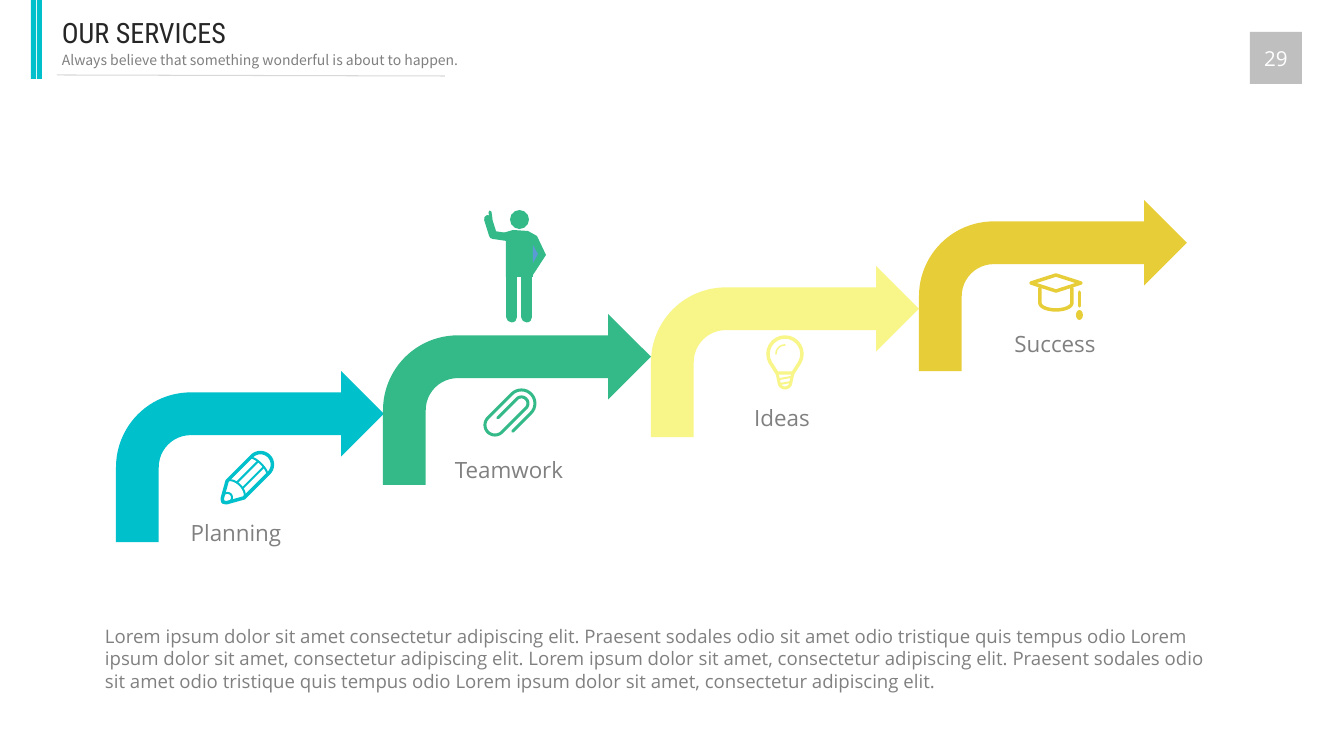
from math import cos, radians, sin, sqrt

from lxml.etree import SubElement
from pptx import Presentation
from pptx.dml.color import RGBColor
from pptx.enum.shapes import MSO_CONNECTOR, MSO_SHAPE
from pptx.enum.text import MSO_ANCHOR, PP_ALIGN
from pptx.oxml.ns import qn
from pptx.util import Emu, Pt

CYAN = RGBColor(0x00, 0xC0, 0xCB)
GREEN = RGBColor(0x34, 0xBA, 0x89)
LEMON = RGBColor(0xF8, 0xF6, 0x89)
GOLD = RGBColor(0xE7, 0xCE, 0x39)
BLUE = RGBColor(0x5B, 0x9B, 0xD5)
WHITE = RGBColor(0xFF, 0xFF, 0xFF)
INK = RGBColor(0x26, 0x26, 0x26)
GRAY = RGBColor(0x80, 0x80, 0x80)
SUBTITLE_GRAY = RGBColor(0x7F, 0x7F, 0x7F)
BADGE_GRAY = RGBColor(0xBF, 0xBF, 0xBF)
RULE_GRAY = RGBColor(0xD8, 0xD8, 0xD8)

TITLE = "OUR SERVICES"
SUBTITLE = "Always believe that something wonderful is about to happen."
PAGE_NUMBER = "29"
SENTENCE = "Lorem ipsum dolor sit amet, consectetur adipiscing elit."
PRAESENT = "Praesent sodales odio sit amet odio tristique quis tempus odio"
BODY = f"{SENTENCE.replace(',', '')} {PRAESENT} {SENTENCE} {SENTENCE} {PRAESENT} {SENTENCE}"

# label, colour, arrow corner, label corner
STEPS = [
    ("Planning", CYAN, (116, 371), (168, 514)),
    ("Teamwork", GREEN, (383, 314), (441, 451)),
    ("Ideas", LEMON, (651, 266), (714, 399)),
    ("Success", GOLD, (919, 200), (987, 325)),
]
ARROW_SIZE = (268, 171)
LABEL_SIZE = (136, 37)
EMU_PER_PX = 914400 / 100.8


def px(*lengths):
    return [Emu(round(length * EMU_PER_PX)) for length in lengths]


def paint(shape, color):
    shape.shadow.inherit = False
    shape.fill.solid()
    shape.fill.fore_color.rgb = color
    shape.line.fill.background()


def add_preset(shapes, kind, box, color):
    shape = shapes.add_shape(kind, *px(*box))
    paint(shape, color)
    return shape


def write(shape, text, name, size, color, align=PP_ALIGN.LEFT):
    shape.text_frame.word_wrap = True
    paragraph = shape.text_frame.paragraphs[0]
    paragraph.alignment = align
    run = paragraph.add_run()
    run.text = text
    for attribute, value in {"name": name, "size": Pt(size)}.items():
        setattr(run.font, attribute, value)
    run.font.color.rgb = color


def add_outline(shapes, points, close):
    start, *others = [px(*point) for point in points]
    builder = shapes.build_freeform(*start)
    builder.add_line_segments(others, close=close)
    return builder.convert_to_shape()


def add_area(shapes, points, color):
    paint(add_outline(shapes, points, True), color)


def add_stroke(shapes, points, color, width=3, close=False):
    """Draw a round-ended line, width px thick, through the points."""
    shape = add_outline(shapes, points, close)
    shape.shadow.inherit = False
    shape.fill.background()
    shape.line.color.rgb = color
    shape.line.width = px(width)[0]
    line = shape._element.spPr.find(qn("a:ln"))
    line.set("cap", "rnd")
    SubElement(line, qn("a:round"))


def arc(center, radius_x, radius_y, first, last, pieces=16):
    angles = [radians(first + (last - first) * piece / pieces) for piece in range(pieces + 1)]
    return [(center[0] + radius_x * cos(angle), center[1] + radius_y * sin(angle)) for angle in angles]


def tilt(points, center):
    """Turn points around the origin by 45 degrees, rising to the right, and move them to center."""
    return [(center[0] + (x + y) / sqrt(2), center[1] + (y - x) / sqrt(2)) for x, y in points]


def draw_pencil(shapes, color):
    center = (247, 478)
    case = arc((19, 0), 12, 12, -90, 90) + [(-16, 12), (-32, 3), (-34, 0), (-32, -3), (-16, -12)]
    add_stroke(shapes, tilt(case, center), color, 3.5, True)
    for left, across, along in ((16, 4, 12), (-17, 7, 12), (-29, 6, 5)):
        add_stroke(shapes, tilt(arc((left, 0), across, along, -90, 90), center), color, 2)
    for side in (-4, 4):
        add_stroke(shapes, tilt([(-10, side), (19, side)], center), color, 2)


def draw_clip(shapes, color):
    wire = [(-26, 13.5)]
    for middle, radius, first in (((0, 0), 13.5, 90), ((-34, -3.5), 10, -90), ((0, 0), 6.5, 90)):
        wire += arc(middle, radius, radius, first, first - 180)
    wire.append((-27, -6.5))
    add_stroke(shapes, tilt(wire, (521.5, 403.5)), color)


def draw_speaker(shapes, color):
    add_preset(shapes, MSO_SHAPE.OVAL, (510, 210, 19, 19), color)
    torso = [(503, 233), (513, 230), (528, 231), (537, 236), (546, 255), (533, 275), (533, 277), (506, 277)]
    add_area(shapes, torso + [(506, 240)], color)
    add_stroke(shapes, [(488, 219), (493, 235), (507, 237)], color, 8)
    add_stroke(shapes, [(490, 212), (491, 219)], color)
    for leg in (512, 527):
        add_stroke(shapes, [(leg, 277), (leg, 317)], color, 11)
    add_area(shapes, [(533, 245), (538, 254), (533, 263)], BLUE)


def draw_bulb(shapes, color):
    center = (785, 354)
    glass = arc(center, 17, 17, 150, 390)
    base = arc((785, 382), 6, 6, 0, 180)
    add_stroke(shapes, [(777, 373)] + glass + [(793, 373)], color, 3.5, True)
    add_stroke(shapes, [(793, 373)] + base + [(777, 373)], color)
    for level in (379, 384):
        add_stroke(shapes, [(780, level), (791, level - 2)], color, 2)
    add_stroke(shapes, arc(center, 9, 9, 180, 270), color, 1.5)


def draw_cap(shapes, color):
    add_stroke(shapes, arc((1056, 283), 25, 8, 0, 360, 4), color, 3.5, True)
    bowl = arc((1056, 303), 16, 7, 180, 0)
    add_stroke(shapes, [(1040, 288)] + bowl + [(1072, 288)], color, 3.5)
    add_stroke(shapes, [(1080, 292), (1080, 306)], color)
    add_preset(shapes, MSO_SHAPE.OVAL, (1076, 310, 7, 10), color)


ICONS = {
    "Planning": [draw_pencil],
    "Teamwork": [draw_clip, draw_speaker],
    "Ideas": [draw_bulb],
    "Success": [draw_cap],
}


def main():
    presentation = Presentation()
    presentation.slide_width, presentation.slide_height = px(1344, 756)
    slide = presentation.slides.add_slide(presentation.slide_layouts[6])
    shapes = slide.shapes

    for text, box, name, size, color in (
        (BODY, (95, 620, 1142, 78), "Open Sans", 13.3, GRAY),
        (TITLE, (52, 11, 426, 44), "Roboto Condensed", 20, INK),
        (SUBTITLE, (52, 47, 426, 27), "Noto Sans CJK SC", 10, SUBTITLE_GRAY),
    ):
        write(shapes.add_textbox(*px(*box)), text, name, size, color)

    for label, color, arrow_corner, label_corner in STEPS:
        group = shapes.add_group_shape().shapes
        add_preset(group, MSO_SHAPE.BENT_ARROW, arrow_corner + ARROW_SIZE, color)
        label_box = group.add_textbox(*px(*label_corner, *LABEL_SIZE))
        write(label_box, label, "Open Sans", 16, GRAY, PP_ALIGN.CENTER)
        for draw_icon in ICONS[label]:
            draw_icon(group, color)

    badge = add_preset(shapes, MSO_SHAPE.RECTANGLE, (1250, 32, 52, 52), BADGE_GRAY)
    badge.text_frame.vertical_anchor = MSO_ANCHOR.MIDDLE
    write(badge, PAGE_NUMBER, "Open Sans", 14.7, WHITE, PP_ALIGN.CENTER)
    for left in (31, 37):
        add_preset(shapes, MSO_SHAPE.RECTANGLE, (left, 0, 5, 79), CYAN)

    rule = shapes.add_connector(MSO_CONNECTOR.STRAIGHT, *px(57, 75, 445, 76))
    rule.line.color.rgb = RULE_GRAY
    rule.line.width = Pt(0.75)
    SubElement(rule._element.spPr, qn("a:effectLst"))
    presentation.save("out.pptx")


if __name__ == "__main__":
    main()
